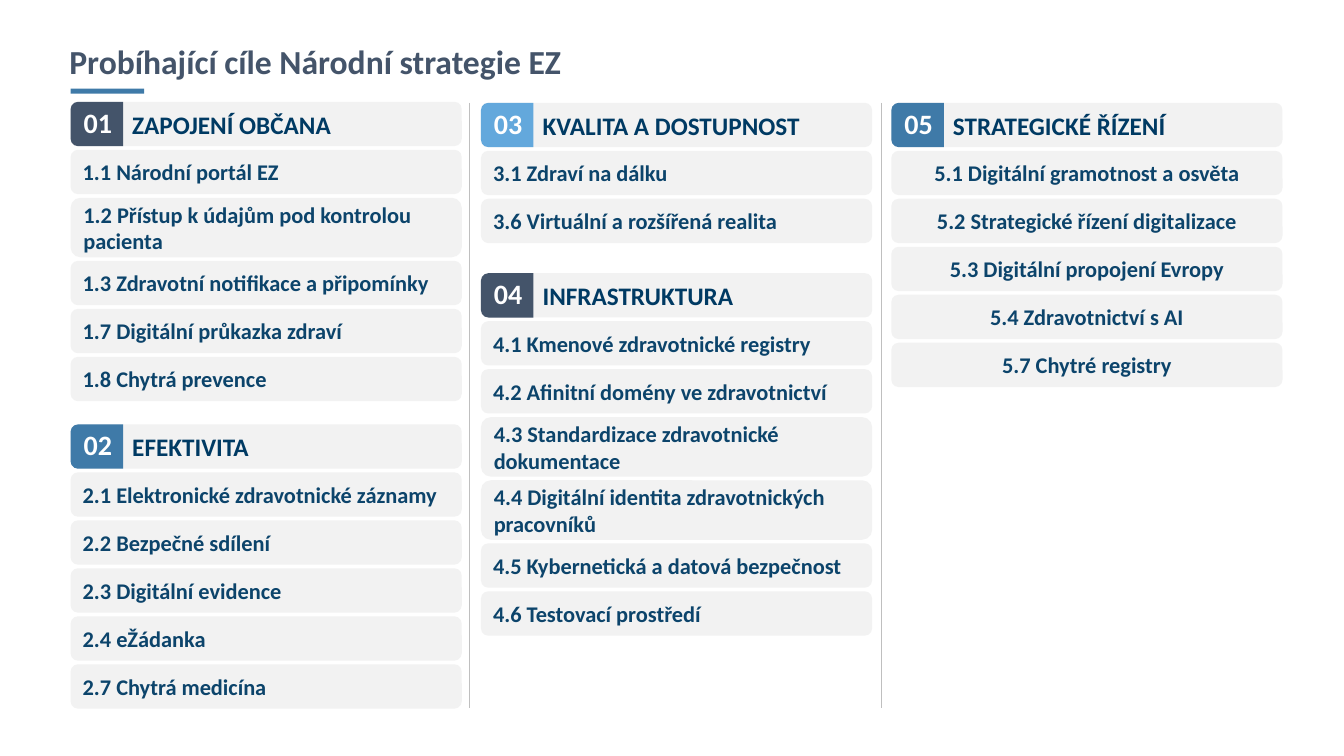
from dataclasses import dataclass

from lxml import etree
from pptx import Presentation, util as u
from pptx.dml.color import RGBColor
from pptx.enum import shapes, text
from pptx.oxml.ns import qn


@dataclass(frozen=True)
class Theme:
    font: str = "Calibri"
    slate: str = "44546A"
    blue: str = "3F7AA8"
    sky: str = "63A8DC"
    panel: str = "F2F2F2"
    heading: str = "003A63"
    goal: str = "0C446B"
    white: str = "FFFFFF"
    divider: str = "BFBFBF"
    title_size: int = 24
    badge_size: int = 20
    heading_size: int = 18
    goal_size: int = 16


THEME = Theme()
LEFT, CENTER = text.PP_ALIGN.LEFT, text.PP_ALIGN.CENTER
CARD_WIDTH = u.Inches(3.88)
ROW = u.Inches(0.44)
TALL_ROW = u.Inches(0.59)
GAP = u.Pt(2.6)
BADGE_WIDTH = u.Inches(0.52)
TWO_LINE_GOALS = {"1.2", "4.3", "4.4"}

# left, top, number, badge colour, heading, goal alignment, goals
AREAS = [
    (0.7, 1.01, "01", THEME.slate, "ZAPOJENÍ OBČANA", LEFT, [
        "1.1 Národní portál EZ",
        "1.2 Přístup k údajům pod kontrolou\npacienta",
        "1.3 Zdravotní notifikace a připomínky",
        "1.7 Digitální průkazka zdraví",
        "1.8 Chytrá prevence"]),
    (0.7, 4.21, "02", THEME.blue, "EFEKTIVITA", LEFT, [
        "2.1 Elektronické zdravotnické záznamy",
        "2.2 Bezpečné sdílení",
        "2.3 Digitální evidence",
        "2.4 eŽádanka",
        "2.7 Chytrá medicína"]),
    (4.77, 1.02, "03", THEME.sky, "KVALITA A DOSTUPNOST", LEFT, [
        "3.1 Zdraví na dálku",
        "3.6 Virtuální a rozšířená realita"]),
    (4.77, 2.71, "04", THEME.slate, "INFRASTRUKTURA", LEFT, [
        "4.1 Kmenové zdravotnické registry",
        "4.2 Afinitní domény ve zdravotnictví",
        "4.3 Standardizace zdravotnické dokumentace",
        "4.4 Digitální identita zdravotnických pracovníků",
        "4.5 Kybernetická a datová bezpečnost",
        "4.6 Testovací prostředí"]),
    (8.84, 1.02, "05", THEME.blue, "STRATEGICKÉ ŘÍZENÍ", CENTER, [
        "5.1 Digitální gramotnost a osvěta",
        "5.2 Strategické řízení digitalizace",
        "5.3 Digitální propojení Evropy",
        "5.4 Zdravotnictví s AI",
        "5.7 Chytré registry"]),
]


class GoalSlide:
    def __init__(self, slide, theme):
        self.slide = slide
        self.theme = theme

    def fill_text(self, frame, words, size, color, align=LEFT, spacing=None):
        frame.word_wrap = True
        frame.text = words
        for paragraph in frame.paragraphs:
            paragraph.alignment = align
            paragraph.line_spacing = spacing
            paragraph.font.name = self.theme.font
            paragraph.font.size = u.Pt(size)
            paragraph.font.bold = True
            paragraph.font.color.rgb = RGBColor.from_string(color)

    def block(self, parent, kind, left, top, width, height, color):
        block = parent.shapes.add_shape(kind, left, top, width, height)
        block.shadow.inherit = False
        block.fill.solid()
        block.fill.fore_color.rgb = RGBColor.from_string(color)
        block.line.fill.background()
        block.text_frame.vertical_anchor = text.MSO_ANCHOR.MIDDLE
        return block

    def title(self, words):
        box = self.slide.shapes.add_textbox(
            u.Inches(0.59), u.Inches(0.4), u.Inches(12.13), u.Inches(0.52))
        self.fill_text(box.text_frame, words, self.theme.title_size,
                       self.theme.slate, spacing=0.9)
        self.block(self.slide, shapes.MSO_SHAPE.RECTANGLE, u.Inches(0.7),
                   u.Inches(0.88), u.Inches(0.73), u.Inches(0.05),
                   self.theme.blue)

    def card(self, parent, left, top, height=ROW):
        return self.block(parent, shapes.MSO_SHAPE.ROUNDED_RECTANGLE,
                          left, top, CARD_WIDTH, height, self.theme.panel)

    def header(self, left, top, number, color, heading):
        group = self.slide.shapes.add_group_shape()
        card = self.card(group, left, top)
        card.text_frame.margin_left = u.Inches(0.59)
        self.fill_text(card.text_frame, heading, self.theme.heading_size,
                       self.theme.heading)

        # Turned a quarter left, so its width and height swap about its centre.
        offset = (BADGE_WIDTH - ROW) // 2
        badge = self.block(group, shapes.MSO_SHAPE.ROUND_2_SAME_RECTANGLE,
                           left + offset, top - offset, ROW, BADGE_WIDTH, color)
        badge.rotation = 270
        self.fill_text(badge.text_frame, number, self.theme.badge_size,
                       self.theme.white, CENTER, 0.9)
        badge.text_frame._txBody.bodyPr.set("vert", "vert")

    def area(self, left, top, number, color, heading, align, goals):
        """Stack a numbered header and its goals downwards from top."""
        left, top = u.Inches(left), u.Inches(top)
        self.header(left, top, number, color, heading)
        top += ROW + GAP
        for goal in goals:
            height = TALL_ROW if goal.split()[0] in TWO_LINE_GOALS else ROW
            card = self.card(self.slide, left, top, height)
            self.fill_text(card.text_frame, goal, self.theme.goal_size,
                           self.theme.goal, align)
            top += height + GAP

    def divider(self, x):
        line = self.slide.shapes.add_connector(
            shapes.MSO_CONNECTOR.STRAIGHT,
            u.Inches(x), u.Inches(1.02), u.Inches(x), u.Inches(7.02))
        line.line.color.rgb = RGBColor.from_string(self.theme.divider)
        line.line.width = u.Pt(0.5)
        etree.SubElement(line._element.spPr, qn("a:effectLst"))


def main():
    deck = Presentation()
    deck.slide_width, deck.slide_height = u.Inches(13.33), u.Inches(7.5)
    goal_slide = GoalSlide(deck.slides.add_slide(deck.slide_layouts[6]), THEME)
    goal_slide.title("Probíhající cíle Národní strategie EZ")
    for area in AREAS:
        goal_slide.area(*area)
    for x in (4.66, 8.74):
        goal_slide.divider(x)
    deck.save("out.pptx")


if __name__ == "__main__":
    main()
